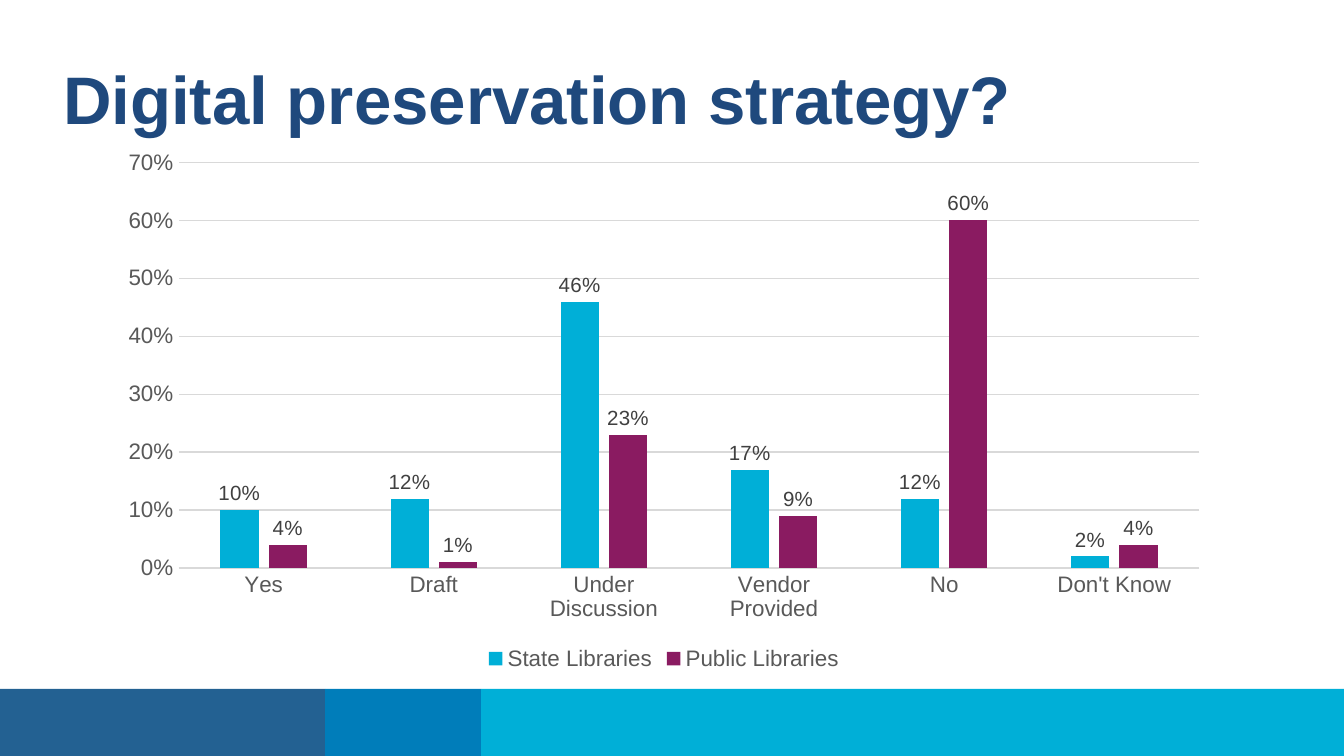
import pptx
import pptx.chart.data
import pptx.dml.color
import pptx.enum.chart
import pptx.enum.shapes
import pptx.enum.text
import pptx.util

WIDTH = 10
HEIGHT = WIDTH * 9 / 16
FONT = "Arial"
TITLE = "Digital preservation strategy?"
BAND_HEIGHT = 0.5
BANDS = [(2.42, "236192"), (1.16, "007DBA"), (6.42, "00AFD7")]
CATEGORIES = ["Yes", "Draft", "Under Discussion", "Vendor Provided", "No", "Don't Know"]
SERIES = [
    ("State Libraries", "00AFD7", [0.1, 0.12, 0.46, 0.17, 0.12, 0.02]),
    ("Public Libraries", "8A1B61", [0.04, 0.01, 0.23, 0.09, 0.6, 0.04]),
]
AXIS_TEXT, LABEL_TEXT, GRID = "595959", "404040", "D9D9D9"


def inches(*lengths):
    return [pptx.util.Inches(length) for length in lengths]


def color(value):
    return pptx.dml.color.RGBColor.from_string(value)


def paint(fill, value):
    fill.solid()
    fill.fore_color.rgb = color(value)


def style_font(font, size, value, bold=False):
    font.name = FONT
    font.size = pptx.util.Pt(size)
    font.bold = bold
    font.color.rgb = color(value)


def style_line(line):
    line.width = pptx.util.Pt(0.75)
    paint(line.fill, GRID)


def add_bands(page):
    left = 0
    for width, value in BANDS:
        band = page.shapes.add_shape(
            pptx.enum.shapes.MSO_SHAPE.RECTANGLE,
            *inches(left, HEIGHT - BAND_HEIGHT, width, BAND_HEIGHT),
        )
        band.shadow.inherit = False
        paint(band.fill, value)
        band.line.fill.background()
        left += width


def add_title(page):
    title = page.shapes.title
    title.left, title.top, title.width, title.height = inches(0.37, 0.38, 9.23, 0.75)
    title.text_frame.vertical_anchor = pptx.enum.text.MSO_ANCHOR.TOP
    para = title.text_frame.paragraphs[0]
    para.alignment = pptx.enum.text.PP_ALIGN.LEFT
    span = para.add_run()
    span.text = TITLE
    style_font(span.font, 36, "1F497D", bold=True)


def add_column_chart(page):
    data = pptx.chart.data.CategoryChartData(number_format="0%")
    data.categories = CATEGORIES
    for name, _, values in SERIES:
        data.add_series(name, values)
    chart = page.shapes.add_chart(
        pptx.enum.chart.XL_CHART_TYPE.COLUMN_CLUSTERED,
        *inches(0.79, 1.04, 8.3, 3.99),
        data,
    ).chart
    style_font(chart.font, 10, "000000")
    chart.has_title = False
    chart.has_legend = True
    chart.legend.position = pptx.enum.chart.XL_LEGEND_POSITION.BOTTOM
    chart.legend.include_in_layout = False
    style_font(chart.legend.font, 12, AXIS_TEXT)

    for axis in (chart.category_axis, chart.value_axis):
        axis.major_tick_mark = pptx.enum.chart.XL_TICK_MARK.NONE
        axis.minor_tick_mark = pptx.enum.chart.XL_TICK_MARK.NONE
        style_font(axis.tick_labels.font, 12, AXIS_TEXT)
    style_line(chart.category_axis.format.line)
    scale = chart.value_axis
    scale.minimum_scale, scale.maximum_scale, scale.major_unit = 0, 0.7, 0.1
    scale.format.line.fill.background()
    style_line(scale.major_gridlines.format.line)
    scale.tick_labels.number_format = "0%"
    scale.tick_labels.number_format_is_linked = False

    plot = chart.plots[0]
    plot.vary_by_categories = False
    plot.gap_width, plot.overlap = 219, -27
    for series, (_, value, _) in zip(plot.series, SERIES):
        paint(series.format.fill, value)
        labels = series.data_labels
        labels.show_value = True
        labels.position = pptx.enum.chart.XL_LABEL_POSITION.OUTSIDE_END
        labels.number_format = "0%"
        labels.number_format_is_linked = False
        style_font(labels.font, 11, LABEL_TEXT)


def main():
    deck = pptx.Presentation()
    deck.slide_width, deck.slide_height = inches(WIDTH, HEIGHT)
    page = deck.slides.add_slide(deck.slide_layouts.get_by_name("Title Only"))
    paint(page.background.fill, "FFFFFF")
    add_bands(page)
    add_title(page)
    add_column_chart(page)
    deck.save("out.pptx")


if __name__ == "__main__":
    main()
